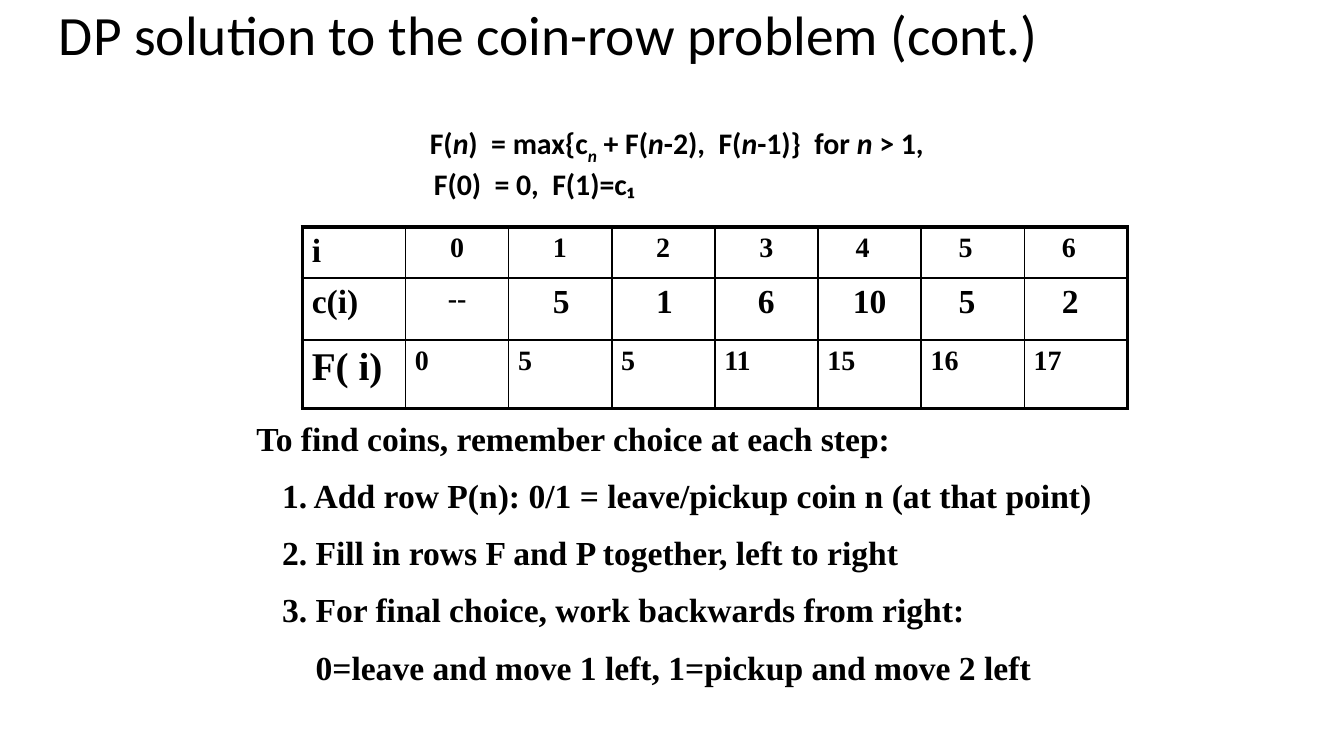
from dataclasses import dataclass

from lxml import etree
from pptx import Presentation
from pptx.dml.color import RGBColor
from pptx.enum.text import MSO_ANCHOR, PP_ALIGN
from pptx.oxml.ns import qn
from pptx.util import Inches, Pt

CENTER, LEFT = PP_ALIGN.CENTER, PP_ALIGN.LEFT
TOP, MIDDLE = MSO_ANCHOR.TOP, MSO_ANCHOR.MIDDLE


@dataclass(frozen=True)
class Theme:
    """Colours, fonts and point sizes of the slide."""
    ink: str = "000000"
    sans: str = "Calibri"
    serif: str = "Times New Roman"
    title: float = 29.7
    formula: float = 16
    small: float = 15
    body: float = 18
    large: float = 21
    thin: float = 1
    thick: float = 2.25
    step_gap: float = 9


THEME = Theme()

RECURRENCE = [
    ("F(", ""), ("n", "i"), (")  = max{c", ""), ("n", "sub"), (" + F(", ""), ("n", "i"),
    ("-2),  F(", ""), ("n", "i"), ("-1)}  for ", ""), ("n ", "i"), ("> 1, ", ""),
]
BASE_CASES = "F(0)  = 0,  F(1)=c₁"

ROW_HEIGHTS = [0.37, 0.46, 0.51]
CENTERED = None
COIN_ROWS = [
    (("i", THEME.body), THEME.small,
     [("0", CENTERED), ("1", 0.26), ("2", 0.26), ("3", CENTERED), ("4", 0.21), ("5", 0.21), ("6", 0.21)]),
    (("c(i)", THEME.body), THEME.body,
     [("--", CENTERED), ("5", 0.26), ("1", 0.26), ("6", 0.25), ("10", 0.19), ("5", 0.21), ("2", 0.21)]),
    (("F( i)", THEME.large), THEME.small,
     [(value, 0) for value in ("0", "5", "5", "11", "15", "16", "17")]),
]

STEPS = [
    ("To find coins, remember choice at each step:", 0),
    ("1. Add row P(n): 0/1 = leave/pickup coin n (at that point)", 0.19),
    ("2. Fill in rows F and P together, left to right", 0.19),
    ("3. For final choice, work backwards from right:", 0.19),
    ("0=leave and move 1 left, 1=pickup and move 2 left", 0.44),
]


def add_run(paragraph, text, font, size, bold=True):
    """Append a styled run and return it."""
    run = paragraph.add_run()
    run.text = text
    run.font.name = font
    run.font.size = Pt(size)
    run.font.bold = bold
    run.font.color.rgb = RGBColor.from_string(THEME.ink)
    return run


def indent(paragraph, inches):
    """Set the left margin of a paragraph."""
    properties = paragraph._p.get_or_add_pPr()
    properties.set("marL", str(Inches(inches)))
    properties.set("indent", "0")


def add_text_frame(slide, box, anchor=TOP):
    """Add a wrapping text box and return its frame."""
    frame = slide.shapes.add_textbox(*(Inches(length) for length in box)).text_frame
    frame.word_wrap = True
    frame.vertical_anchor = anchor
    return frame


def add_title(slide, box):
    """Place the slide title."""
    heading = add_text_frame(slide, box, MIDDLE).paragraphs[0]
    heading.line_spacing = 0.9
    add_run(heading, "DP solution to the coin-row problem (cont.)", THEME.sans, THEME.title, False)


def add_formula(slide, box):
    """Place the recurrence and its base cases."""
    frame = add_text_frame(slide, box)
    recurrence = frame.paragraphs[0]
    recurrence.alignment = CENTER
    for text, style in RECURRENCE:
        run = add_run(recurrence, text, THEME.sans, THEME.formula)
        run.font.italic = bool(style)
        if style == "sub":
            run.font._element.set("baseline", "-25000")
    base_cases = frame.add_paragraph()
    indent(base_cases, 1.51)
    add_run(base_cases, BASE_CASES, THEME.sans, THEME.formula)


def set_borders(cell, widths):
    """Draw the left, right, top and bottom borders of a cell."""
    properties = cell._tc.get_or_add_tcPr()
    for position, (side, width) in enumerate(zip(("lnL", "lnR", "lnT", "lnB"), widths)):
        line = etree.Element(qn(f"a:{side}"), w=str(Pt(width)))
        fill = etree.SubElement(line, qn("a:solidFill"))
        etree.SubElement(fill, qn("a:srgbClr"), val=THEME.ink)
        properties.insert(position, line)


def fill_cell(cell, text, size, offset):
    """Write a cell's value, centred or at an offset from the left."""
    cell.fill.background()
    cell.margin_left = cell.margin_right = Inches(0.07)
    cell.margin_top = cell.margin_bottom = Inches(0.04)
    paragraph = cell.text_frame.paragraphs[0]
    paragraph.alignment = CENTER if offset is CENTERED else LEFT
    if offset:
        indent(paragraph, offset)
    add_run(paragraph, text, THEME.serif, size)


def add_coin_table(slide, box):
    """Place the table of coin values and best sums."""
    row_count, column_count = len(COIN_ROWS), len(COIN_ROWS[0][2]) + 1
    table = slide.shapes.add_table(row_count, column_count, *(Inches(length) for length in box)).table
    table.first_row = table.horz_banding = False
    for column in table.columns:
        column.width = Inches(box[2] / column_count)
    for r, ((label, label_size), value_size, values) in enumerate(COIN_ROWS):
        table.rows[r].height = Inches(ROW_HEIGHTS[r])
        entries = [(label, label_size, 0)]
        entries += [(value, THEME.small if value == "--" else value_size, offset) for value, offset in values]
        for c, entry in enumerate(entries):
            cell = table.cell(r, c)
            fill_cell(cell, *entry)
            outer = (c == 0, c == column_count - 1, r == 0, r == row_count - 1)
            set_borders(cell, [THEME.thick if edge else THEME.thin for edge in outer])


def add_steps(slide, box):
    """Place the steps for recovering the chosen coins."""
    frame = add_text_frame(slide, box)
    for number, (text, offset) in enumerate(STEPS):
        step = frame.add_paragraph() if number else frame.paragraphs[0]
        if number:
            step.space_before = Pt(THEME.step_gap)
            indent(step, offset)
        add_run(step, text, THEME.serif, THEME.body)


def main():
    """Build and save the slide."""
    deck = Presentation()
    deck.slide_width, deck.slide_height = Inches(10), Inches(10 * 9 / 16)
    slide = deck.slides.add_slide(deck.slide_layouts[6])
    add_title(slide, (0.34, 0, 8.41, 0.56))
    add_coin_table(slide, (2.25, 1.69, 6.14, 1.34))
    add_formula(slide, (1.62, 0.88, 6.88, 0.64))
    add_steps(slide, (1.81, 3.06, 6.69, 2.22))
    deck.save("out.pptx")


if __name__ == "__main__":
    main()
